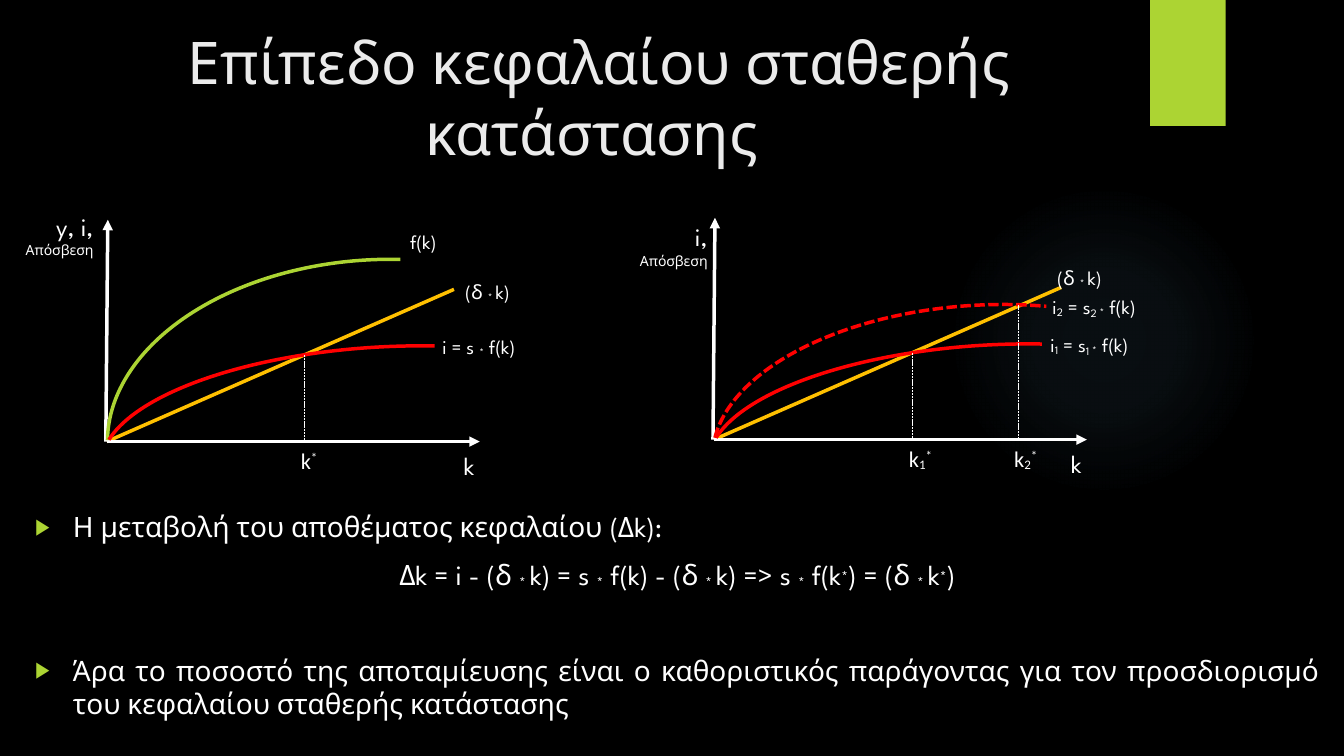
import dataclasses

import pptx
import pptx.dml.color
import pptx.enum.dml
import pptx.enum.shapes
import pptx.enum.text
import pptx.oxml
import pptx.oxml.ns
import pptx.util

Pt = pptx.util.Pt
Rgb = pptx.dml.color.RGBColor.from_string
Kind = pptx.enum.shapes.MSO_SHAPE
Align = pptx.enum.text.PP_ALIGN
Anchor = pptx.enum.text.MSO_ANCHOR
Dash = pptx.enum.dml.MSO_LINE.SQUARE_DOT
qn = pptx.oxml.ns.qn


@dataclasses.dataclass(frozen=True)
class Theme:
    back: str = "000000"
    ink: str = "FFFFFF"
    pale: str = "EBEBEB"
    green: str = "ACD433"
    gold: str = "FFC000"
    red: str = "FF0000"
    glow: str = "7AC4F0"
    font: str = "League Spartan"
    plain: str = "Calibri"
    title: int = 42
    body: int = 20
    axis: int = 18
    mark: int = 16
    label: int = 14
    small: int = 10
    thick: float = 2.5
    thin: float = 0.5


T = Theme()
LOW = (("*", -10),)
DELTA = ("(δ ", ("* ", -10), "k) ")


def node(parent, tag, **attrs):
    item = parent.makeelement(qn(tag), attrs)
    parent.append(item)
    return item


# Text: each part is a string, or (string, baseline percent, size)
def write(para, parts, size=T.label, font=T.font, color=T.ink,
          align=Align.LEFT, gap=0, lead=None, bullet=False):
    para.alignment = align
    para.space_before = Pt(gap)
    if lead:
        para.line_spacing = lead
    if bullet:
        props = para._p.get_or_add_pPr()
        props.set("marL", str(Pt(27)))
        props.set("indent", str(Pt(-27)))
        node(node(props, "a:buClr"), "a:srgbClr", val=T.green)
        node(props, "a:buSzPct", val="80000")
        node(props, "a:buFont", typeface="Arial")
        node(props, "a:buChar", char="▶")
    for part in parts:
        words, base, points = (*((part,) if isinstance(part, str) else part), 0, None)[:3]
        run = para.add_run()
        run.text = words
        run.font.size = Pt(points or size)
        run.font.name = font
        run.font.color.rgb = Rgb(color)
        if base:
            run._r.get_or_add_rPr().set("baseline", str(base * 1000))


def frame(slide, box, wrap=True, anchor=Anchor.TOP):
    area = slide.shapes.add_textbox(*map(Pt, box)).text_frame
    area.word_wrap = wrap
    area.vertical_anchor = anchor
    return area


def text(slide, box, *parts, wrap=True, anchor=Anchor.TOP, **form):
    write(frame(slide, box, wrap, anchor).paragraphs[0], parts, **form)


def line(slide, start, end, color=T.ink, width=T.thick, arrow=False, dash=False):
    link = slide.shapes.add_connector(
        pptx.enum.shapes.MSO_CONNECTOR.STRAIGHT, *map(Pt, (*start, *end)))
    link.line.color.rgb = Rgb(color)
    link.line.width = Pt(width)
    if dash:
        link.line.dash_style = Dash
    if arrow:
        node(link.line._get_or_add_ln(), "a:tailEnd", type="triangle")
    node(link._element.spPr, "a:effectLst")


def curve(slide, box, start, end, color, dash=False):
    arc = slide.shapes.add_shape(Kind.ARC, *map(Pt, box))
    arc.adjustments[0], arc.adjustments[1] = start, end
    arc.rotation = 266.6
    arc.shadow.inherit = False
    arc.fill.background()
    arc.line.color.rgb = Rgb(color)
    arc.line.width = Pt(T.thick)
    if dash:
        arc.line.dash_style = Dash


# Backdrop: soft glow and green tab
def backdrop(slide):
    slide.background.fill.solid()
    slide.background.fill.fore_color.rgb = Rgb(T.back)
    glow = slide.shapes.add_shape(Kind.OVAL, *map(Pt, (677.5, 131.8, 221.8, 221.8)))
    tab = slide.shapes.add_shape(Kind.RECTANGLE, *map(Pt, (821.5, 0, 54, 90)))
    for shape in (glow, tab):
        shape.shadow.inherit = False
        shape.line.fill.background()
    tab.fill.solid()
    tab.fill.fore_color.rgb = Rgb(T.green)
    stops = "".join(
        f'<a:gs pos="{at}000"><a:srgbClr val="{T.glow}">'
        f'<a:alpha val="{alpha}000"/></a:srgbClr></a:gs>'
        for at, alpha in ((0, 7), (36, 6), (69, 0)))
    fill = pptx.oxml.parse_xml(
        f'<a:gradFill {pptx.oxml.ns.nsdecls("a")}><a:gsLst>{stops}</a:gsLst>'
        '<a:path path="circle"><a:fillToRect l="50000" t="50000" r="50000" b="50000"/>'
        '</a:path></a:gradFill>')
    glow._element.spPr.find(qn("a:prstGeom")).addnext(fill)


# Graph: x, y is the origin of the axes; marks are (x, height, label parts)
def graph(slide, x, y, upper, marks, labels, name, shift):
    def box(left, top, wide, high):
        return x + left, y + top, wide, high

    line(slide, (x, y), (x + 248, y - 108.7), T.gold)
    line(slide, (x - 0.7, y), (x + 0.7, y - 158.4), arrow=True)
    line(slide, (x, y), (x + 266.4, y), arrow=True)
    place, start, end, color, dash = upper
    curve(slide, box(*place), start, end, color, dash)
    curve(slide, box(123.5, -195, 145.4, 400.3), 165.18, 18.46, T.red)
    for across, height, parts in marks:
        line(slide, (x + across, y - height), (x + across, y + 0.7),
             width=T.thin, dash=True)
        text(slide, box(across - 9.8, 0.5, 40.3, 26.6), *parts,
             size=T.mark, font=T.plain)
    text(slide, box(*shift, 66.6, 41), name, ("Απόσβεση", 0, T.small),
         size=T.axis, align=Align.RIGHT)
    text(slide, box(226.5, 2.5, 43.2, 28.8), "k", size=T.axis, align=Align.RIGHT)
    for place, parts, form in labels:
        text(slide, box(*place), *parts, **form)


# Body: two bullets around a centred formula
def body(slide, box):
    area = frame(slide, box)
    write(area.paragraphs[0], ["Η μεταβολή του αποθέματος κεφαλαίου (Δk):"],
          size=T.body, bullet=True)
    star, high = ("* ", -10), ("*", 10)
    write(area.add_paragraph(),
          ["Δk = i - (δ ", star, "k) = s ", *LOW, " f(k) - (δ ", star, "k) => s ",
           *LOW, " f(k", high, ") = (δ ", star, "k", high, ")"],
          size=T.body, align=Align.CENTER, gap=10)
    write(area.add_paragraph(),
          ["Άρα το ποσοστό της αποταμίευσης είναι ο καθοριστικός παράγοντας "
           "για τον προσδιορισμό του κεφαλαίου σταθερής κατάστασης"],
          size=T.body, align=Align.JUSTIFY, gap=44, bullet=True)


def saving(num):
    return f"i", (num, -10), " = s", (f"{num} ", -15), *LOW, " f(k)"


def main():
    deck = pptx.Presentation()
    deck.slide_width, deck.slide_height = Pt(960), Pt(540)
    slide = deck.slides.add_slide(deck.slide_layouts[6])
    backdrop(slide)
    text(slide, (57.6, 13.7, 740.2, 110.2), "Επίπεδο κεφαλαίου σταθερής κατάστασης ",
         size=T.title, color=T.pale, align=Align.CENTER, anchor=Anchor.MIDDLE)
    mid, flat = {"align": Align.CENTER, "lead": 1.5}, {"wrap": False}
    graph(slide, 76.3, 315.4,
          ((69.1, -198.7, 246.2, 383.8), 163, 6.91, T.green, False),
          [(141.3, 61.9, ("k", ("*", 30)))],
          [((209.5, -154.8, 63.4, 24.5), ["f(k)"], {}),
           ((234.7, -127.4, 77.8, 29.5), DELTA, mid),
           ((232.6, -79.9, 72.7, 24.5), ["i = s ", *LOW, " f(k)"], flat)],
          "y, i, ", (-69.1, -167.8))
    graph(slide, 510, 314,
          ((91.4, -188.6, 198.7, 383.8), 164.88, 17.26, T.red, True),
          [(142, 61.9, ("k", ("1", -10), ("*", 30))),
           (217.2, 95.8, ("k", ("2", -10), ("*", 30)))],
          [((223.9, -136.1, 77.8, 29.5), DELTA, mid),
           ((233.3, -79.9, 83.5, 24.5), saving("1"), flat),
           ((234.7, -106.6, 83.5, 24.5), saving("2"), flat)],
          "i, ", (-64.1, -159.1))
    body(slide, (18, 360.7, 931.7, 163.4))
    deck.save("out.pptx")


if __name__ == "__main__":
    main()
